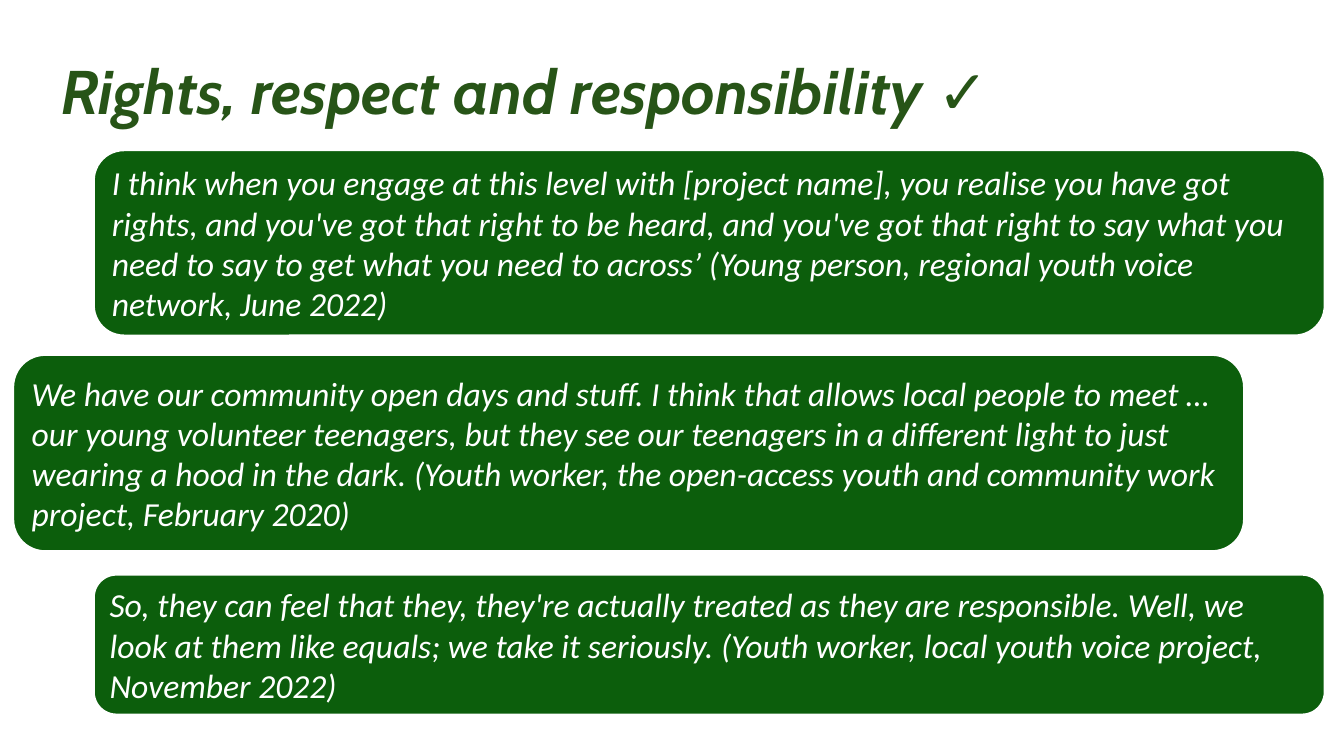
from dataclasses import dataclass

from pptx import Presentation
from pptx.dml.color import RGBColor
from pptx.enum.shapes import MSO_SHAPE as Preset
from pptx.enum.text import MSO_ANCHOR as Anchor, MSO_AUTO_SIZE as AutoSize, PP_ALIGN as Align
from pptx.util import Pt

EMU_PER_PX = 9144
SLIDE_SIZE = (1333, 750)
TITLE_BOX = (51, 40, 1190, 108)
QUOTE_WIDTH = 1223
RIGHT_SHIFTED, LEFT_SHIFTED = 92, 12

QUOTES = [
    (RIGHT_SHIFTED, 148, 186,
     "I think when you engage at this level with [project name], you realise you have got "
     "rights, and you've got that right to be heard, and you've got that right to say what you "
     "need to say to get what you need to across’ (Young person, regional youth voice "
     "network, June 2022)"),
    (LEFT_SHIFTED, 351, 197,
     "We have our community open days and stuff. I think that allows local people to meet … "
     "our young volunteer teenagers, but they see our teenagers in a different light to just "
     "wearing a hood in the dark. (Youth worker, the open-access youth and community work "
     "project, February 2020)"),
    (RIGHT_SHIFTED, 569, 141,
     "So, they can feel that they, they're actually treated as they are responsible. Well, we "
     "look at them like equals; we take it seriously. (Youth worker, local youth voice project, "
     "November 2022)"),
]


@dataclass(frozen=True)
class Theme:
    """Colours, fonts and type sizes of the slide."""
    title_color: RGBColor = RGBColor.from_string("275417")
    panel: RGBColor = RGBColor.from_string("0C5E0C")
    white: RGBColor = RGBColor.from_string("FFFFFF")
    title_font: str = "Cabin"
    symbol_font: str = "Arial"
    quote_font: str = "Calibri"
    title_size: Pt = Pt(44)
    quote_size: Pt = Pt(24)
    outline: Pt = Pt(3)


THEME = Theme()


def px(*lengths):
    """Turn px lengths into EMU."""
    return [length * EMU_PER_PX for length in lengths]


def add_title(slide, box):
    """Fill the title placeholder with the heading and its tick."""
    title = slide.shapes.title
    title.left, title.top, title.width, title.height = px(*box)
    frame = title.text_frame
    frame.auto_size = AutoSize.NONE
    frame.vertical_anchor = Anchor.MIDDLE
    paragraph = frame.paragraphs[0]
    paragraph.alignment = Align.LEFT
    paragraph.line_spacing = 0.9
    for text, font_name, italic in (
        ("Rights, respect and responsibility ", THEME.title_font, True),
        ("✓", THEME.symbol_font, False),
    ):
        run = paragraph.add_run()
        run.text = text
        font = run.font
        font.name, font.size = font_name, THEME.title_size
        font.bold, font.italic = True, italic
        font.color.rgb = THEME.title_color


def add_quote(slide, box, text):
    """Place one rounded green panel holding a quotation."""
    panel = slide.shapes.add_shape(Preset.ROUNDED_RECTANGLE, *px(*box))
    panel.shadow.inherit = False
    panel.fill.solid()
    panel.fill.fore_color.rgb = THEME.panel
    panel.line.color.rgb = THEME.white
    panel.line.width = THEME.outline
    frame = panel.text_frame
    frame.word_wrap = True
    frame.vertical_anchor = Anchor.MIDDLE
    paragraph = frame.paragraphs[0]
    paragraph.text = text
    paragraph.alignment = Align.LEFT
    font = paragraph.font
    font.name, font.size, font.italic = THEME.quote_font, THEME.quote_size, True
    font.color.rgb = THEME.white


def main():
    """Build the slide and save it."""
    presentation = Presentation()
    presentation.slide_width, presentation.slide_height = px(*SLIDE_SIZE)
    slide = presentation.slides.add_slide(presentation.slide_layouts[5])
    add_title(slide, TITLE_BOX)
    for left, top, height, text in QUOTES:
        add_quote(slide, (left, top, QUOTE_WIDTH, height), text)
    presentation.save("out.pptx")


if __name__ == "__main__":
    main()
